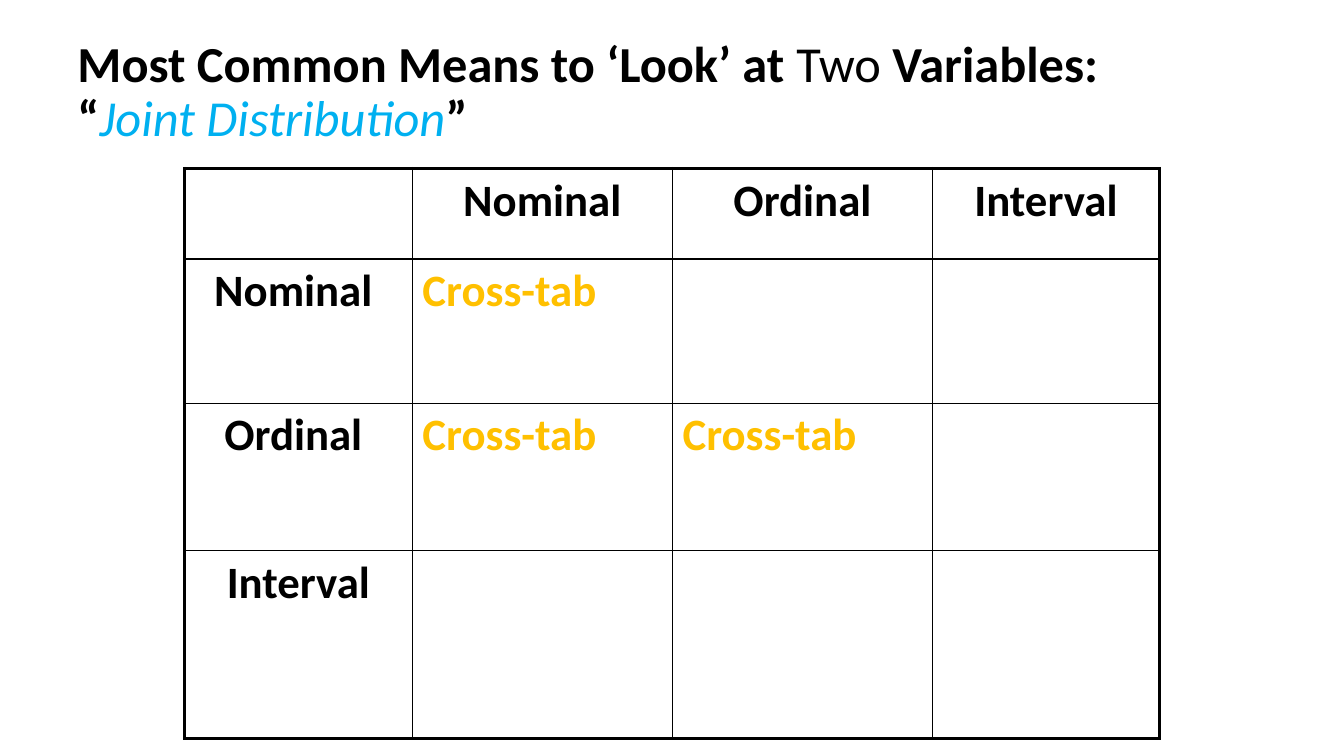
from dataclasses import dataclass

from lxml import etree
from pptx import Presentation
from pptx.dml.color import RGBColor
from pptx.enum.text import MSO_ANCHOR, PP_ALIGN
from pptx.oxml.ns import qn
from pptx.util import Inches, Pt

CENTER, LEFT, MIDDLE = PP_ALIGN.CENTER, PP_ALIGN.LEFT, MSO_ANCHOR.MIDDLE


@dataclass(frozen=True)
class Theme:
    font: str = "Calibri"
    title_size: int = 36
    cell_size: int = 32
    ink: str = "000000"
    term: str = "00B0F0"
    method: str = "FFC000"
    outer_line: float = 2.25
    inner_line: float = 1


THEME = Theme()

# Title lines: (text, bold, italic, colour)
TITLE = [
    [("Most Common Means to ‘Look’ at ", True, False, THEME.ink),
     ("Two", False, False, THEME.ink),
     (" Variables: ", True, False, THEME.ink)],
    [("“", True, False, THEME.ink),
     ("Joint Distribution", False, True, THEME.term),
     ("”", True, False, THEME.ink)],
]
GRID = [
    ["", "Nominal", "Ordinal", "Interval"],
    ["Nominal ", "Cross-tab", "", ""],
    ["Ordinal ", "Cross-tab", "Cross-tab", ""],
    ["Interval", "", "", ""],
]
SLIDE = (13.33, 7.5)
TITLE_BOX = (0.67, 0.3, 12, 1.25)
TABLE_AT = (1.83, 1.67)
COLUMNS = [2.26, 2.58, 2.58, 2.25]
ROWS = [0.9, 1.43, 1.46, 1.87]


def add_title(slide):
    tf = slide.shapes.add_textbox(*map(Inches, TITLE_BOX)).text_frame
    tf.word_wrap = True
    tf.vertical_anchor = MIDDLE
    p = tf.paragraphs[0]
    p.line_spacing = 0.9
    p.font.name, p.font.size = THEME.font, Pt(THEME.title_size)
    for i, line in enumerate(TITLE):
        if i:
            p.add_line_break()
        for text, bold, italic, color in line:
            r = p.add_run()
            r.text = text
            r.font.name, r.font.size = THEME.font, Pt(THEME.title_size)
            r.font.bold, r.font.italic = bold, italic
            r.font.color.rgb = RGBColor.from_string(color)


def set_borders(cell, row, col):
    """Draw thick lines on the table's rim and thin lines inside."""
    rim = {"lnL": col == 0, "lnR": col == len(COLUMNS) - 1,
           "lnT": row == 0, "lnB": row == len(ROWS) - 1}
    props = cell._tc.get_or_add_tcPr()
    for i, (side, outer) in enumerate(rim.items()):
        width = Pt(THEME.outer_line if outer else THEME.inner_line)
        ln = etree.Element(qn(f"a:{side}"), w=str(int(width)))
        fill = etree.SubElement(ln, qn("a:solidFill"))
        etree.SubElement(fill, qn("a:srgbClr"), val=THEME.ink)
        props.insert(i, ln)


def fill_cell(cell, text, row, col):
    heading = row == 0 or col == 0
    cell.fill.background()
    set_borders(cell, row, col)
    if not text:
        return
    p = cell.text_frame.paragraphs[0]
    p.alignment = CENTER if heading else LEFT
    r = p.add_run()
    r.text = text
    r.font.name, r.font.size, r.font.bold = THEME.font, Pt(THEME.cell_size), True
    r.font.color.rgb = RGBColor.from_string(THEME.ink if heading else THEME.method)


def add_grid(slide):
    size = (sum(COLUMNS), sum(ROWS))
    table = slide.shapes.add_table(
        len(ROWS), len(COLUMNS), *map(Inches, TABLE_AT + size)).table
    table.first_row = table.horz_banding = False
    for column, width in zip(table.columns, COLUMNS):
        column.width = Inches(width)
    for row, height in zip(table.rows, ROWS):
        row.height = Inches(height)
    for i, texts in enumerate(GRID):
        for j, text in enumerate(texts):
            fill_cell(table.cell(i, j), text, i, j)


def main():
    prs = Presentation()
    prs.slide_width, prs.slide_height = map(Inches, SLIDE)
    slide = prs.slides.add_slide(prs.slide_layouts[6])
    add_title(slide)
    add_grid(slide)
    prs.save("out.pptx")


if __name__ == "__main__":
    main()
